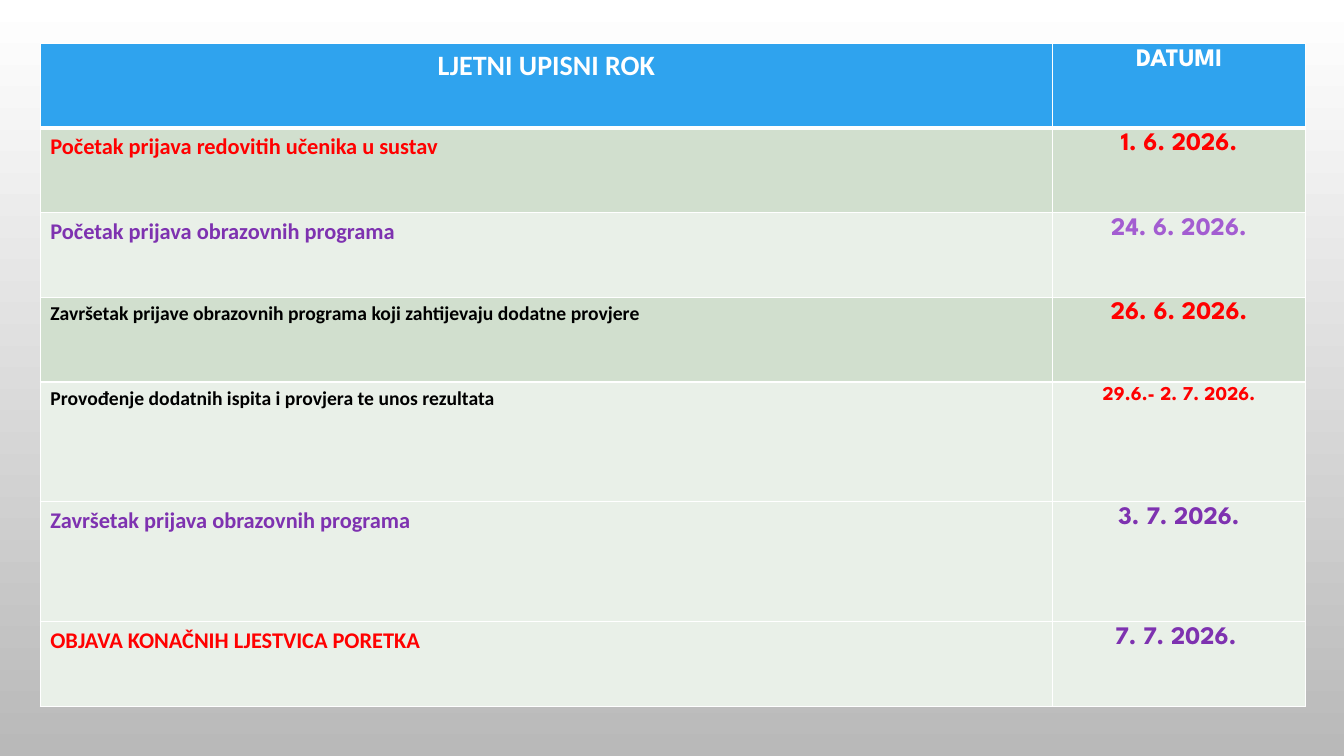
import pptx
import pptx.dml.color
import pptx.enum.text
import pptx.oxml
import pptx.oxml.ns
import pptx.util

RGBColor = pptx.dml.color.RGBColor
Inches = pptx.util.Inches
Pt = pptx.util.Pt

WHITE = RGBColor(0xFF, 0xFF, 0xFF)
GRAY = RGBColor(0xB9, 0xB9, 0xB9)
BLUE = RGBColor(0x2F, 0xA3, 0xEE)
SAGE = RGBColor(0xD1, 0xDF, 0xCE)
PALE = RGBColor(0xE9, 0xF0, 0xE8)
RED = RGBColor(0xFF, 0x00, 0x00)
PURPLE = RGBColor(0x7E, 0x32, 0xB0)
LILAC = RGBColor(0xA3, 0x5D, 0xD1)
BLACK = RGBColor(0x00, 0x00, 0x00)

COLUMN_WIDTHS = (10.04, 2.51)
SCHEDULE = [
    (0.84, BLUE, ("LJETNI UPISNI ROK", 20, WHITE), ("DATUMI", 18, WHITE)),
    (0.84, SAGE, ("Početak prijava redovitih učenika u sustav", 16, RED), ("1. 6. 2026.", 18, RED)),
    (0.84, PALE, ("Početak prijava obrazovnih programa", 16, PURPLE), ("24. 6. 2026.", 18, LILAC)),
    (0.84, SAGE, ("Završetak prijave obrazovnih programa koji zahtijevaju dodatne provjere", 14, BLACK),
     ("26. 6. 2026.", 18, RED)),
    (1.19, PALE, ("Provođenje dodatnih ispita i provjera te unos rezultata", 14, BLACK),
     ("29.6.- 2. 7. 2026.", 14, RED)),
    (1.19, PALE, ("Završetak prijava obrazovnih programa", 16, PURPLE), ("3. 7. 2026.", 18, PURPLE)),
    (0.84, PALE, ("OBJAVA KONAČNIH LJESTVICA PORETKA", 16, RED), ("7. 7. 2026. ", 18, PURPLE)),
]


class SchedulePage:
    label_font = "Calibri"
    date_font = "League Spartan"
    border_color = WHITE

    def __init__(self, deck):
        self.page = deck.slides.add_slide(deck.slide_layouts[6])

    def background(self, top, bottom):
        fill = self.page.background.fill
        fill.gradient()
        fill.gradient_angle = 270
        for stop, color in zip(fill.gradient_stops, (top, bottom)):
            stop.color.rgb = color

    def borders(self, cell, top, bottom):
        properties = cell._tc.get_or_add_tcPr()
        namespace = pptx.oxml.ns.nsdecls("a")
        sides = (("L", 1), ("R", 1), ("T", top), ("B", bottom))
        for position, (side, width) in enumerate(sides):
            properties.insert(position, pptx.oxml.parse_xml(
                f'<a:ln{side} {namespace} w="{Pt(width)}"><a:solidFill>'
                f'<a:srgbClr val="{self.border_color}"/></a:solidFill></a:ln{side}>'))

    def cell(self, cell, content, fill, font, centered):
        text, size, color = content
        cell.fill.solid()
        cell.fill.fore_color.rgb = fill
        para = cell.text_frame.paragraphs[0]
        para.text = text
        if centered:
            para.alignment = pptx.enum.text.PP_ALIGN.CENTER
        span = para.runs[0].font
        span.name, span.size, span.bold = font, Pt(size), True
        span.color.rgb = color

    def table(self, left, top, widths, rows):
        height = sum(row[0] for row in rows)
        table = self.page.shapes.add_table(
            len(rows), len(widths), Inches(left), Inches(top),
            Inches(sum(widths)), Inches(height)).table
        for column, width in zip(table.columns, widths):
            column.width = Inches(width)
        for index, (row_height, fill, label, date) in enumerate(rows):
            table.rows[index].height = Inches(row_height)
            fonts = (self.label_font, self.date_font)
            for column, (content, font) in enumerate(zip((label, date), fonts)):
                cell = table.cell(index, column)
                self.cell(cell, content, fill, font, index == 0 or column == 1)
                self.borders(cell, 3 if index == 1 else 1, 3 if index == 0 else 1)


def main():
    deck = pptx.Presentation()
    deck.slide_width = Inches(13.33)
    deck.slide_height = Inches(7.5)
    schedule = SchedulePage(deck)
    schedule.background(WHITE, GRAY)
    schedule.table(0.4, 0.43, COLUMN_WIDTHS, SCHEDULE)
    deck.save("out.pptx")


if __name__ == "__main__":
    main()
